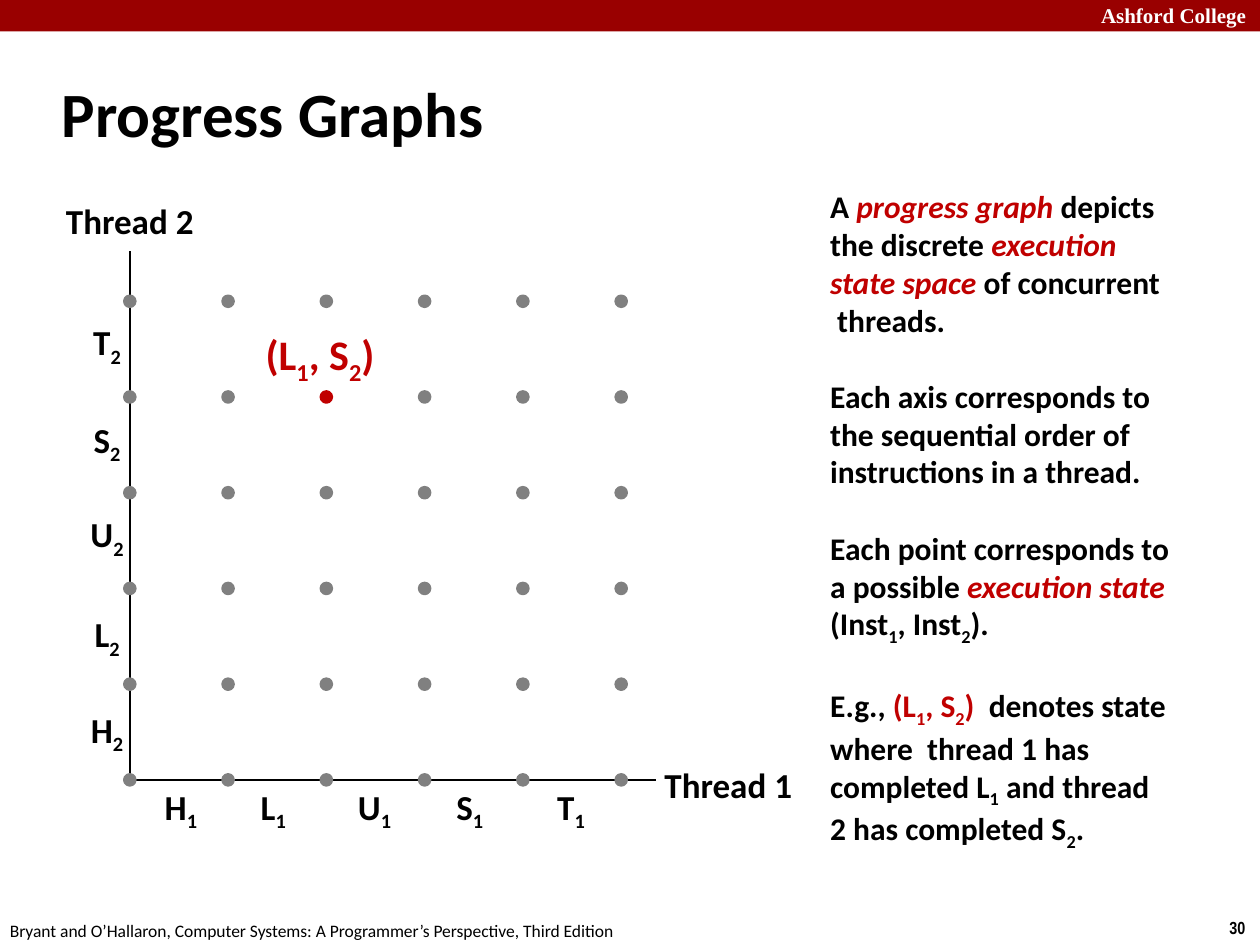
from dataclasses import dataclass
from itertools import product
from typing import NamedTuple

from lxml import etree
from pptx import Presentation
from pptx import util as u
from pptx.dml import color
from pptx.enum import shapes, text
from pptx.oxml import ns

COLORS = {"banner": "990000", "accent": "C00000", "dot": "808080",
          "ink": "000000", "paper": "FFFFFF"}
WIDTH, HEIGHT = u.Inches(10), u.Inches(7.5)

# Percentages of the slide
ORIGIN_X, ORIGIN_Y = 10.3, 82.53
COL, ROW = 7.8, 10.13
DOT = u.Inches(0.08)
STEPS = 6
STATE = (2, 4)


class Run(NamedTuple):
    text: str
    color: str = "ink"
    italic: bool = False
    sub: bool = False


class Box(NamedTuple):
    left: float
    top: float
    width: float
    height: float


@dataclass
class Style:
    size: float
    bold: bool = True
    font: str = "Calibri"
    align: text.PP_ALIGN = text.PP_ALIGN.LEFT
    anchor: text.MSO_ANCHOR = text.MSO_ANCHOR.TOP
    gap: float = 0


@dataclass
class Label:
    box: Box
    lines: list
    style: Style


def px(share: float) -> int:
    return round(WIDTH * share / 100)


def py(share: float) -> int:
    return round(HEIGHT * share / 100)


def grid(col: float, row: float) -> tuple[int, int]:
    return px(ORIGIN_X + col * COL), py(ORIGIN_Y - row * ROW)


def rgb(name: str) -> color.RGBColor:
    return color.RGBColor.from_string(COLORS[name])


def apply(target, values: dict) -> None:
    for name, value in values.items():
        setattr(target, name, value)


def place(sp, box: Box) -> None:
    apply(sp, {"left": px(box.left), "top": py(box.top),
               "width": px(box.width), "height": py(box.height)})


def write(tf, paragraphs: list, style: Style) -> None:
    for i, lines in enumerate(paragraphs):
        p = tf.add_paragraph() if i else tf.paragraphs[0]
        apply(p, {"alignment": style.align,
                  "space_before": u.Pt(style.gap if i else 0)})
        for j, line in enumerate(lines):
            if j:
                p.add_line_break()
            for run in line:
                r = p.add_run()
                r.text = run.text
                apply(r.font, {"name": style.font, "size": u.Pt(style.size),
                               "bold": style.bold, "italic": run.italic})
                r.font.color.rgb = rgb(run.color)
                if run.sub:
                    r._r.get_or_add_rPr().set("baseline", "-25000")


def draw_label(s, label: Label) -> None:
    sp = s.shapes.add_textbox(0, 0, 0, 0)
    apply(sp.text_frame, {"word_wrap": False, "vertical_anchor": label.style.anchor,
                          "auto_size": text.MSO_AUTO_SIZE.SHAPE_TO_FIT_TEXT})
    place(sp, label.box)
    write(sp.text_frame, label.lines, label.style)


def draw_shape(s, kind, fill: str, line_width: float = 0):
    sp = s.shapes.add_shape(kind, 0, 0, DOT, DOT)
    sp.shadow.inherit = False
    sp.fill.solid()
    sp.fill.fore_color.rgb = rgb(fill)
    if line_width:
        sp.line.color.rgb = rgb(fill)
        sp.line.width = u.Pt(line_width)
    else:
        sp.line.fill.background()
    return sp


def draw_axis(s, col: float, row: float) -> None:
    line = s.shapes.add_connector(shapes.MSO_CONNECTOR.STRAIGHT,
                                  *grid(0, 0), *grid(col, row))
    line.line.color.rgb = rgb("ink")
    line.line.width = u.Pt(1)
    etree.SubElement(line._element.spPr, ns.qn("a:effectLst"))


def draw_dot(s, col: int, row: int) -> None:
    fill = "accent" if (col, row) == STATE else "dot"
    sp = draw_shape(s, shapes.MSO_SHAPE.OVAL, fill, 2)
    x, y = grid(col, row)
    apply(sp, {"left": x - DOT // 2, "top": y - DOT // 2})


def indexed(name: str, index: str, fill: str = "ink") -> list[Run]:
    return [Run(name, fill), Run(index, fill, sub=True)]


def state(end: str) -> list[Run]:
    return [*indexed("(L", "1", "accent"), *indexed(", S", "2", "accent"),
            Run(end, "accent")]


def plain(words: str, fill: str = "ink") -> list:
    return [[[Run(words, fill)]]]


def term(words: str) -> Run:
    return Run(words, "accent", italic=True)


EXPLANATION = [
    [[Run("A "), term("progress graph "), Run("depicts")],
     [Run("the discrete "), term("execution")],
     [term("state space"), Run(" of concurrent")],
     [Run(" threads.")]],
    [[Run("Each axis corresponds to")],
     [Run("the sequential order of")],
     [Run("instructions in a thread.")]],
    [[Run("Each point corresponds to")],
     [Run("a possible "), term("execution state")],
     [*indexed("(Inst", "1"), *indexed(", Inst", "2"), Run(").")]],
    [[Run("E.g., "), *state(")  "), Run("denotes state")],
     [Run("where  thread 1 has")],
     [*indexed("completed L", "1"), Run(" and thread")],
     [*indexed("2 has completed S", "2"), Run(".")]],
]

MIDDLE = text.MSO_ANCHOR.MIDDLE
AXIS = Style(20, align=text.PP_ALIGN.CENTER, anchor=MIDDLE)
LABELS = [
    Label(Box(86.4, -0.4, 14.3, 4), plain("Ashford College", "paper"),
          Style(12, font="Times New Roman")),
    Label(Box(96.6, 96.4, 3.4, 3.6), plain("30"), Style(10, font="Arial Narrow")),
    Label(Box(-0.2, 96.67, 50.8, 3.6),
          plain("Bryant and O’Hallaron, Computer Systems: "
                "A Programmer’s Perspective, Third Edition"), Style(10, bold=False)),
    Label(Box(64.9, 20, 29.1, 70), EXPLANATION, Style(18, anchor=MIDDLE, gap=22)),
    Label(Box(20.1, 34.13, 11.8, 6.67), [[state(")")]], Style(24)),
    Label(Box(51.7, 80.13, 12.2, 5.87), plain("Thread 1"), AXIS),
    Label(Box(4.2, 20.4, 12.2, 5.87), plain("Thread 2"), AXIS),
]
INSTRUCTIONS = [("H", 4.7, 0.52, 0.5), ("L", 4.2, 1.46, 1.5), ("U", 4.8, 2.49, 2.54),
                ("S", 4.3, 3.46, 3.53), ("T", 4.4, 4.49, 4.55)]


def main() -> None:
    prs = Presentation()
    apply(prs, {"slide_width": WIDTH, "slide_height": HEIGHT})
    s = prs.slides.add_slide(prs.slide_layouts[5])

    place(draw_shape(s, shapes.MSO_SHAPE.RECTANGLE, "banner"), Box(0, 0, 100, 3.33))
    title = s.shapes.title
    place(title, Box(3.9, 6.4, 83, 11.07))
    title.text_frame.vertical_anchor = MIDDLE
    write(title.text_frame, plain("Progress Graphs"), Style(36))

    draw_axis(s, 5.35, 0)
    draw_axis(s, 0, 5.53)
    for label in LABELS:
        draw_label(s, label)
    for name, width, col, row in INSTRUCTIONS:
        below = Box(ORIGIN_X + col * COL - width / 2, 82.67, width, 5.87)
        beside = Box(8.5 - width / 2, ORIGIN_Y - row * ROW - 2.93, width, 5.87)
        for box, thread in ((below, "1"), (beside, "2")):
            draw_label(s, Label(box, [[indexed(name, thread)]], AXIS))
    for col, row in product(range(STEPS), repeat=2):
        draw_dot(s, col, row)

    prs.save("out.pptx")


if __name__ == "__main__":
    main()
